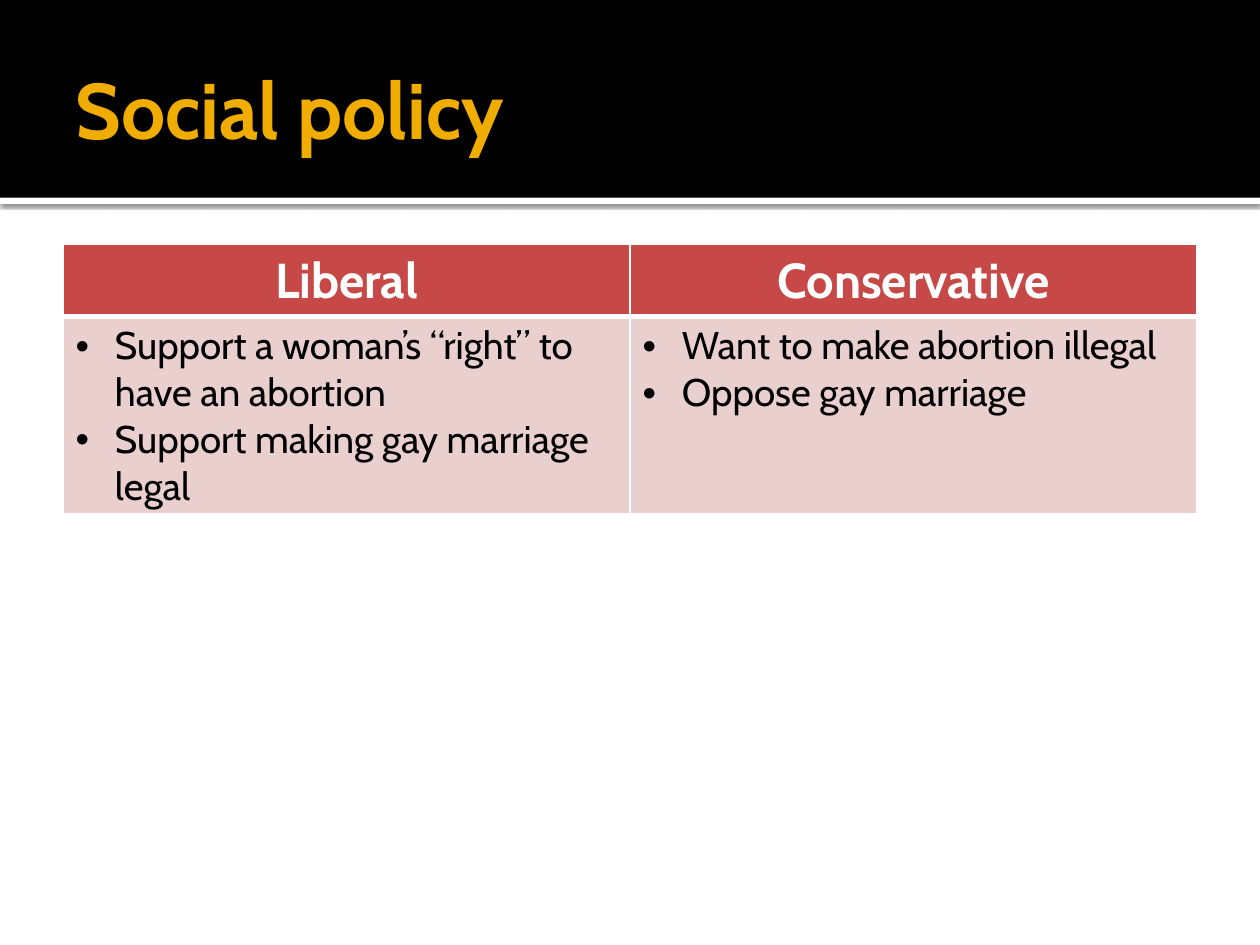
from pptx import Presentation
from pptx.dml.color import RGBColor
from pptx.enum.shapes import MSO_SHAPE
from pptx.enum.text import MSO_ANCHOR, PP_ALIGN
from pptx.oxml import parse_xml
from pptx.oxml.ns import nsdecls, qn
from pptx.util import Pt

RECTANGLE = MSO_SHAPE.RECTANGLE
MIDDLE = MSO_ANCHOR.MIDDLE
CENTER, LEFT = PP_ALIGN.CENTER, PP_ALIGN.LEFT

# Content
TITLE = "Social policy"
POSITIONS = {
    "Liberal": [
        "Support a woman’s “right” to have an abortion",
        "Support making gay marriage legal",
    ],
    "Conservative": [
        "Want to make abortion illegal",
        "Oppose gay marriage",
    ],
}

THEME = {
    "font": "Cabin",
    "band": "000000", "rule": "FFFFFF", "title": "F0AD00",
    "header": "C64847", "body": "EACFCF",
    "header_text": "FFFFFF", "body_text": "000000", "border": "FFFFFF",
    "title_size": 45, "header_size": 28, "body_size": 22,
}

# Layout, in points
PAGE_WIDTH, PAGE_HEIGHT = 720, 540
MARGIN = 36
BAND_HEIGHT, RULE_HEIGHT = 113, 3.6
TABLE_TOP = 139.7
ROW_HEIGHTS = (41, 112.5)
BULLET_INDENT = 22.5


def color(name):
    return RGBColor.from_string(THEME[name])


def add_bar(page, top, height, fill):
    bar = page.shapes.add_shape(RECTANGLE, 0, Pt(top), Pt(PAGE_WIDTH), Pt(height))
    bar.shadow.inherit = False
    bar.fill.solid()
    bar.fill.fore_color.rgb = color(fill)
    bar.line.fill.background()
    return bar


def add_shadow(shape):
    effects = shape._element.spPr.find(qn("a:effectLst"))
    effects.append(parse_xml(
        f'<a:outerShdw {nsdecls("a")} blurRad="{Pt(2.5)}" dist="{Pt(0.8)}" '
        'dir="5400000" algn="tl" rotWithShape="0"><a:srgbClr val="000000">'
        '<a:alpha val="60000"/></a:srgbClr></a:outerShdw>'))


def style_para(para, size, text_color, bold):
    para.font.name = THEME["font"]
    para.font.size = Pt(THEME[size])
    para.font.bold = bold
    para.font.color.rgb = color(text_color)


def add_bullet(para):
    properties = para._p.get_or_add_pPr()
    properties.set("marL", str(Pt(BULLET_INDENT)))
    properties.set("indent", str(-Pt(BULLET_INDENT)))
    bullet = parse_xml(f'<a:buChar {nsdecls("a")} char="•"/>')
    font = parse_xml(f'<a:buFont {nsdecls("a")} typeface="Arial"/>')
    properties.insert(0, font)
    properties.insert(1, bullet)


def fill_cell(cell, lines, role, bottom_width):
    # Borders come before the fill in the cell properties
    properties = cell._tc.get_or_add_tcPr()
    for side, width in (("L", 1), ("R", 1), ("T", 1), ("B", bottom_width)):
        properties.append(parse_xml(
            f'<a:ln{side} {nsdecls("a")} w="{Pt(width)}"><a:solidFill>'
            f'<a:srgbClr val="{THEME["border"]}"/></a:solidFill></a:ln{side}>'))
    cell.fill.solid()
    cell.fill.fore_color.rgb = color(role)
    cell.text_frame.text = "\n".join(lines)
    is_header = role == "header"
    for para in cell.text_frame.paragraphs:
        para.alignment = CENTER if is_header else LEFT
        style_para(para, role + "_size", role + "_text", is_header)
        if not is_header:
            add_bullet(para)


def main():
    deck = Presentation()
    deck.slide_width, deck.slide_height = Pt(PAGE_WIDTH), Pt(PAGE_HEIGHT)
    page = deck.slides.add_slide(deck.slide_layouts[6])

    # Title band with a shadowed white rule below it
    add_shadow(add_bar(page, BAND_HEIGHT, RULE_HEIGHT, "rule"))
    add_bar(page, 0, BAND_HEIGHT, "band")

    # Title
    content_width = PAGE_WIDTH - 2 * MARGIN
    box = page.shapes.add_textbox(Pt(MARGIN), Pt(12.2), Pt(content_width), Pt(98.6))
    frame = box.text_frame
    frame.word_wrap = True
    frame.vertical_anchor = MIDDLE
    frame.margin_left, frame.margin_right = Pt(7.2), Pt(3.6)
    frame.text = TITLE
    style_para(frame.paragraphs[0], "title_size", "title", True)

    # Comparison table
    table = page.shapes.add_table(
        len(ROW_HEIGHTS), len(POSITIONS), Pt(MARGIN), Pt(TABLE_TOP),
        Pt(content_width), Pt(sum(ROW_HEIGHTS))).table
    for row, height in zip(table.rows, ROW_HEIGHTS):
        row.height = Pt(height)
    for column, (heading, points) in enumerate(POSITIONS.items()):
        fill_cell(table.cell(0, column), [heading], "header", 3)
        fill_cell(table.cell(1, column), points, "body", 1)

    deck.save("out.pptx")


if __name__ == "__main__":
    main()
